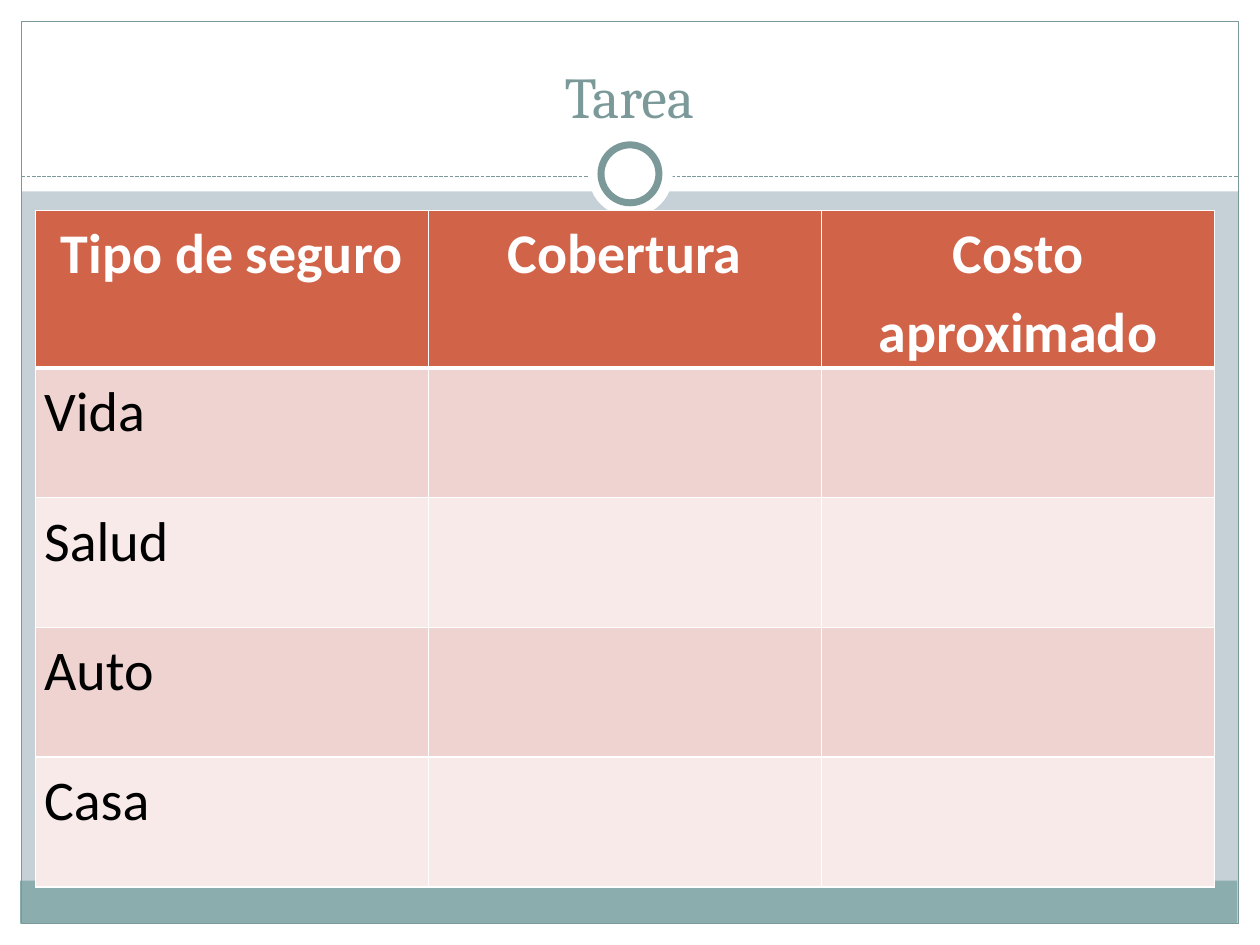
from lxml.etree import SubElement
from pptx import Presentation
from pptx.dml.color import RGBColor
from pptx.enum.dml import MSO_LINE
from pptx.enum.shapes import MSO_CONNECTOR, MSO_SHAPE
from pptx.enum.text import MSO_ANCHOR, PP_ALIGN
from pptx.oxml.ns import qn
from pptx.util import Inches, Pt

COLORS = {"bg": "C5D1D7", "white": "FFFFFF", "band": "8CADAE", "frame": "7C999A",
          "header": "D16349", "odd": "EED3D0", "even": "F7EAE9", "black": "000000"}


def rgb(name):
    return RGBColor.from_string(COLORS[name])


def add_border(cell, side, width):
    ln = SubElement(cell._tc.get_or_add_tcPr(), qn(f"a:ln{side}"), w=str(Pt(width)))
    fill = SubElement(ln, qn("a:solidFill"))
    SubElement(fill, qn("a:srgbClr"), val=COLORS["white"])


prs = Presentation()
prs.slide_width, prs.slide_height = Inches(10), Inches(7.5)
s = prs.slides.add_slide(prs.slide_layouts[5])
s.background.fill.solid()
s.background.fill.fore_color.rgb = rgb("bg")

# Margins, footer band, frame
RECT, OVAL = MSO_SHAPE.RECTANGLE, MSO_SHAPE.OVAL
frame_parts = [
    (RECT, (0, 7.33, 10, 0.17), "white", None),
    (RECT, (0, 0, 10, 1.52), "white", None),
    (RECT, (0, 0, 0.17, 7.5), "white", None),
    (RECT, (9.83, 0, 0.17, 7.5), "white", None),
    (RECT, (0.16, 6.99, 9.66, 0.34), "band", None),
    (RECT, (0.17, 0.17, 9.66, 7.16), None, 0.75),
]
# Ring on the divider
ring_parts = [
    (OVAL, (4.67, 1.05, 0.67, 0.67), "white", None),
    (OVAL, (4.77, 1.15, 0.46, 0.46), "white", 4),
]
for parts in (frame_parts, ring_parts):
    if parts is ring_parts:
        # Dashed divider lies under the ring
        divider = s.shapes.add_connector(MSO_CONNECTOR.STRAIGHT, Inches(0.17), Inches(1.4),
                                         Inches(9.83), Inches(1.4))
        divider.line.color.rgb = rgb("frame")
        divider.line.width = Pt(0.75)
        divider.line.dash_style = MSO_LINE.SQUARE_DOT
        SubElement(divider._element.spPr, qn("a:effectLst"))
    for kind, box, fill, line in parts:
        sp = s.shapes.add_shape(kind, *map(Inches, box))
        sp.shadow.inherit = False
        if fill:
            sp.fill.solid()
            sp.fill.fore_color.rgb = rgb(fill)
        else:
            sp.fill.background()
        if line:
            sp.line.color.rgb = rgb("frame")
            sp.line.width = Pt(line)
        else:
            sp.line.fill.background()

# Title, brought in front of the frame
title = s.shapes.title
s.shapes._spTree.append(title._element)
title.left, title.top, title.width, title.height = map(Inches, (0.33, 0.25, 9.33, 0.83))
tf = title.text_frame
tf.text = "Tarea"
tf.vertical_anchor = MSO_ANCHOR.BOTTOM
p = tf.paragraphs[0]
p.alignment = PP_ALIGN.CENTER
for name, value in {"name": "Cambria", "size": Pt(33)}.items():
    setattr(p.font, name, value)
p.font.color.rgb = rgb("frame")

# Insurance table
rows = [["Tipo de seguro", "Cobertura", "Costo aproximado"],
        ["Vida", "", ""], ["Salud", "", ""], ["Auto", "", ""], ["Casa", "", ""]]
table = s.shapes.add_table(len(rows), 3, Inches(0.28), Inches(1.67),
                           Inches(9.36), Inches(5.36)).table
for col in table.columns:
    col.width = Inches(3.12)
margins = {"margin_left": Inches(0.07), "margin_right": Inches(0.07),
           "margin_top": 0, "margin_bottom": 0}
for i, row in enumerate(rows):
    header = i == 0
    table.rows[i].height = Inches(1.24 if header else 1.03)
    font = {"name": "Calibri", "size": Pt(32), "bold": header}
    for j, text in enumerate(row):
        cell = table.cell(i, j)
        for name, value in margins.items():
            setattr(cell, name, value)
        for side in "LRTB":
            thick = (header and side == "B") or (i == 1 and side == "T")
            add_border(cell, side, 3 if thick else 1)
        cell.fill.solid()
        cell.fill.fore_color.rgb = rgb("header" if header else "odd" if i % 2 else "even")
        if not text:
            continue
        cell.text = text
        p = cell.text_frame.paragraphs[0]
        p.alignment = PP_ALIGN.CENTER if header else PP_ALIGN.LEFT
        p.line_spacing = 1.15
        r = p.runs[0]
        for name, value in font.items():
            setattr(r.font, name, value)
        r.font.color.rgb = rgb("white" if header else "black")

prs.save("out.pptx")
